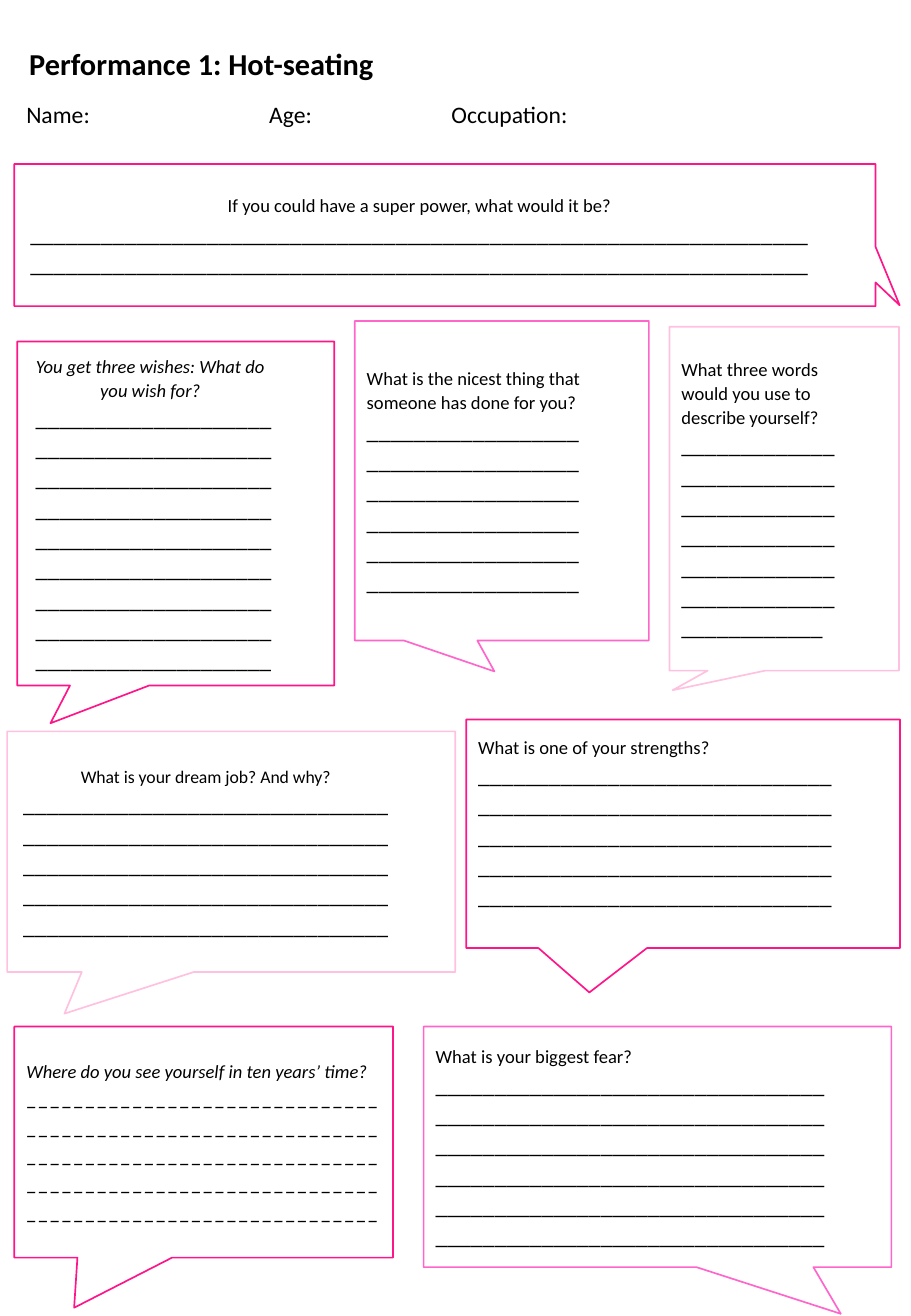
"""Build the hot-seating worksheet with its speech-bubble questions."""
from dataclasses import dataclass

from lxml import etree
from pptx import Presentation
from pptx import util as u
from pptx.dml.color import RGBColor
from pptx.enum import shapes, text
from pptx.oxml.ns import qn

LEFT, CENTER, RIGHT = text.PP_ALIGN.LEFT, text.PP_ALIGN.CENTER, text.PP_ALIGN.RIGHT


@dataclass(frozen=True)
class Theme:
    font: str = "Calibri"
    ink: str = "000000"
    hot: str = "FF158A"
    orchid: str = "FF66CC"
    blush: str = "FFC1E0"
    title: float = 18
    body: float = 14
    question: float = 11
    small: float = 10.5
    outline: float = 1


def write(paragraph, words, theme, size, bold=False, italic=False,
          align=LEFT, spacing=None, right_margin=0, tabs=()):
    paragraph.alignment = align
    paragraph.line_spacing = spacing
    properties = paragraph._p.get_or_add_pPr()
    if right_margin:
        properties.set("marR", str(u.Cm(right_margin)))
    if tabs:
        stops = etree.SubElement(properties, qn("a:tabLst"))
        for position in tabs:
            etree.SubElement(stops, qn("a:tab"), pos=str(u.Cm(position)), algn="l")
    run = paragraph.add_run()
    run.text = words
    font = run.font
    font.name, font.size = theme.font, u.Pt(size)
    font.bold, font.italic = bold, italic
    font.color.rgb = RGBColor.from_string(theme.ink)


class Worksheet:
    def __init__(self, slide, theme):
        self.slide, self.theme = slide, theme

    def heading(self, box, words, size, **style):
        frame = self.slide.shapes.add_textbox(*map(u.Cm, box)).text_frame
        frame.word_wrap = True
        frame.auto_size = text.MSO_AUTO_SIZE.SHAPE_TO_FIT_TEXT
        write(frame.paragraphs[0], words, self.theme, size, **style)

    def bubble(self, box, tail, color, question, blanks, size=None, align=LEFT,
               blank_align=None, italic=False, blank_italic=False,
               spacing=1.07, right_margin=1.06, bottom=0.13):
        callout = self.slide.shapes.add_shape(
            shapes.MSO_SHAPE.RECTANGULAR_CALLOUT, *map(u.Cm, box))
        callout.shadow.inherit = False
        callout.adjustments[0], callout.adjustments[1] = tail
        callout.fill.background()
        callout.line.color.rgb = RGBColor.from_string(color)
        callout.line.width = u.Pt(self.theme.outline)
        frame = callout.text_frame
        frame.word_wrap = True
        frame.vertical_anchor = text.MSO_ANCHOR.MIDDLE
        frame.margin_bottom = u.Cm(bottom)
        layout = dict(spacing=spacing, right_margin=right_margin)
        write(frame.paragraphs[0], question, self.theme, size or self.theme.question,
              italic=italic, align=align, **layout)
        write(frame.add_paragraph(), "_" * blanks, self.theme, self.theme.body,
              italic=blank_italic, align=blank_align or align, **layout)


def main():
    theme = Theme()
    deck = Presentation()
    deck.slide_width, deck.slide_height = u.Cm(19.05), u.Cm(27.51)
    sheet = Worksheet(deck.slides.add_slide(deck.slide_layouts[6]), theme)

    sheet.heading((0.3, 1.96, 18.34, 0.86), "Name:\tAge:\tOccupation:",
                  theme.body, tabs=(5.08, 8.89))
    sheet.heading((0.36, 0.81, 11.56, 1.02), "Performance 1: Hot-seating",
                  theme.title, bold=True)

    sheet.bubble((0.15, 15.29, 9.37, 5.03), (-0.372, 0.673), theme.blush,
                 "What is your dream job? And why?", 5 * 31,
                 size=theme.small, align=CENTER)
    sheet.bubble((0.36, 7.14, 6.63, 7.19), (-0.395, 0.61), theme.hot,
                 "You get three wishes: What do you wish for?", 9 * 20,
                 align=CENTER, blank_align=RIGHT, italic=True)
    sheet.bubble((14, 6.83, 4.8, 7.19), (-0.486, 0.557), theme.blush,
                 "What three words would you use to describe yourself?", 90)
    sheet.bubble((9.75, 15.04, 9.07, 4.78), (-0.216, 0.694), theme.hot,
                 "What is one of your strengths?", 5 * 30, bottom=0.63)
    sheet.bubble((7.42, 6.71, 6.15, 6.68), (-0.025, 0.597), theme.orchid,
                 "What is the nicest thing that someone has done for you?", 6 * 18)
    sheet.bubble((8.86, 21.46, 9.78, 5.03), (0.392, 0.694), theme.orchid,
                 "What is your biggest fear?", 6 * 33)
    sheet.bubble((0.3, 21.46, 7.92, 4.83), (-0.342, 0.717), theme.hot,
                 "Where do you see yourself in ten years’ time?", 5 * 30,
                 italic=True, blank_italic=True, spacing=None, right_margin=0)
    sheet.bubble((0.3, 3.43, 18.01, 2.97), (0.528, 0.494), theme.hot,
                 "If you could have a super power, what would it be?", 2 * 66,
                 align=CENTER)
    deck.save("out.pptx")


if __name__ == "__main__":
    main()
